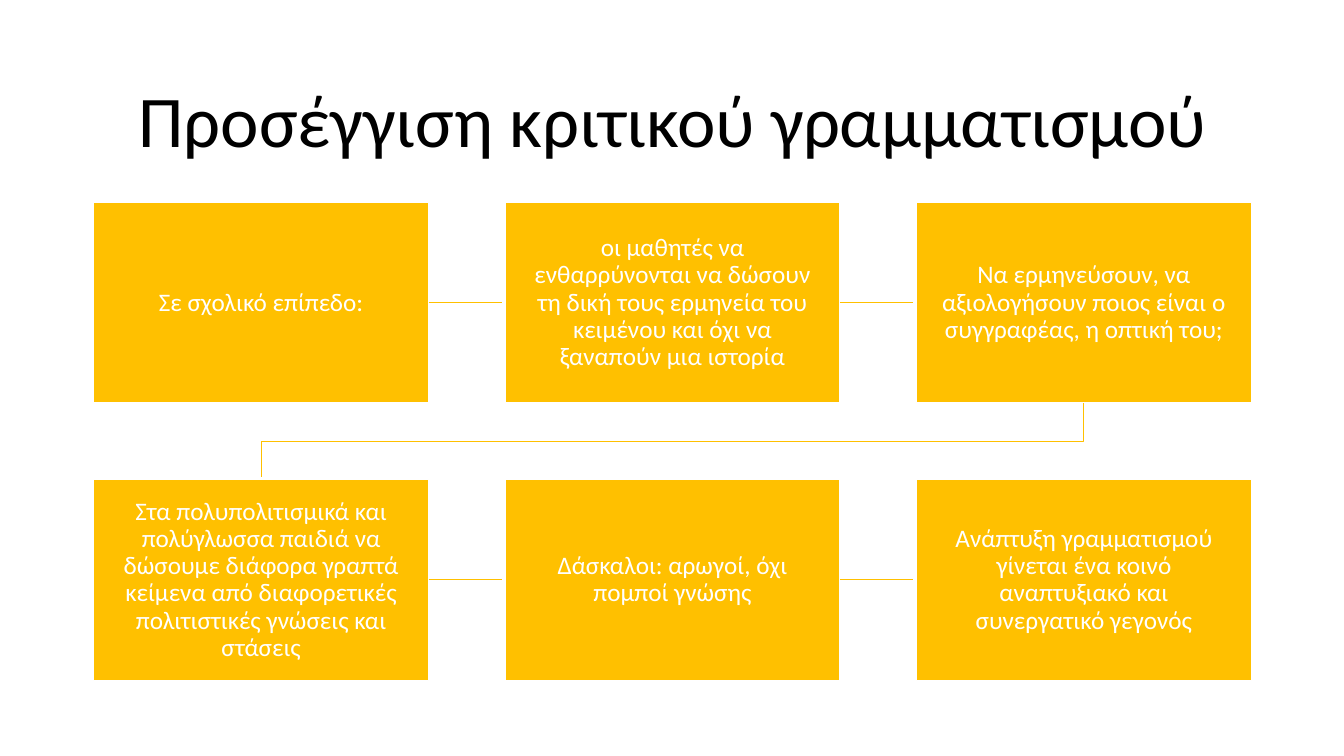
"""Build a slide with a six-step flow on the critical literacy approach."""
from pptx import Presentation
from pptx import util as u
from pptx.dml.color import RGBColor
from pptx.enum import shapes, text
from pptx.oxml import ns, xmlchemy

PX = 9144
THEME = {
    "font": "Calibri",
    "title_size": 52,
    "step_size": 18,
    "black": RGBColor.from_string("000000"),
    "white": RGBColor.from_string("FFFFFF"),
    "amber": RGBColor.from_string("FFC000"),
}
TITLE = "Προσέγγιση κριτικού γραμματισμού"
STEPS = [
    "Σε σχολικό επίπεδο:",
    "οι μαθητές να ενθαρρύνονται να δώσουν τη δική τους ερμηνεία του κειμένου και όχι να ξαναπούν μια ιστορία",
    "Να ερμηνεύσουν, να αξιολογήσουν ποιος είναι ο συγγραφέας, η οπτική του;",
    "Στα πολυπολιτισμικά και πολύγλωσσα παιδιά να δώσουμε διάφορα γραπτά κείμενα από διαφορετικές πολιτιστικές γνώσεις και στάσεις",
    "Δάσκαλοι: αρωγοί, όχι πομποί γνώσης",
    "Ανάπτυξη γραμματισμού γίνεται ένα κοινό αναπτυξιακό και συνεργατικό γεγονός",
]
COLUMNS = 3
LEFT, TOP = 93, 201
BOX_WIDTH, BOX_HEIGHT = 332, 199
COLUMN_STEP, ROW_STEP = 408, 275
ARROW_LENGTH = 73


def write_text(shape, content, size, color):
    """Fill a shape with one centred, formatted paragraph."""
    frame = shape.text_frame
    frame.text = content
    frame.word_wrap = True
    frame.auto_size = text.MSO_AUTO_SIZE.NONE
    frame.vertical_anchor = text.MSO_ANCHOR.MIDDLE
    paragraph = frame.paragraphs[0]
    paragraph.alignment = text.PP_ALIGN.CENTER
    paragraph.line_spacing = 0.9
    font = paragraph.runs[0].font
    font.name = THEME["font"]
    font.size = u.Pt(size)
    font.color.rgb = color


def style_arrow(shape):
    """Give a line its colour and arrowhead, without a shadow."""
    shape.line.color.rgb = THEME["amber"]
    shape.line.width = u.Pt(0.5)
    properties = shape.element.spPr
    outline = properties.find(ns.qn("a:ln"))
    outline.append(xmlchemy.OxmlElement("a:tailEnd", {"type": "arrow"}))
    properties.append(xmlchemy.OxmlElement("a:effectLst"))


presentation = Presentation()
presentation.slide_width = 1333 * PX
presentation.slide_height = 750 * PX
slide = presentation.slides.add_slide(presentation.slide_layouts[5])

title = slide.shapes.title
title.left, title.top, title.width, title.height = [n * PX for n in (92, 61, 1150, 124)]
write_text(title, TITLE, THEME["title_size"], THEME["black"])

for index, step in enumerate(STEPS):
    row, column = divmod(index, COLUMNS)
    left = LEFT + column * COLUMN_STEP
    top = TOP + row * ROW_STEP
    box = slide.shapes.add_shape(
        shapes.MSO_SHAPE.RECTANGLE, left * PX, top * PX, BOX_WIDTH * PX, BOX_HEIGHT * PX
    )
    box.shadow.inherit = False
    box.fill.solid()
    box.fill.fore_color.rgb = THEME["amber"]
    box.line.color.rgb = THEME["white"]
    box.line.width = u.Pt(1)
    write_text(box, step, THEME["step_size"], THEME["white"])
    box.text_frame.margin_left = box.text_frame.margin_right = 16 * PX
    box.text_frame.margin_top = box.text_frame.margin_bottom = 17 * PX

    if column < COLUMNS - 1:
        start = left + BOX_WIDTH
        middle = top + BOX_HEIGHT // 2
        arrow = slide.shapes.add_connector(
            shapes.MSO_CONNECTOR.STRAIGHT,
            start * PX, middle * PX, (start + ARROW_LENGTH) * PX, middle * PX,
        )
        style_arrow(arrow)

first_center = LEFT + BOX_WIDTH // 2
last_center = first_center + (COLUMNS - 1) * COLUMN_STEP
row_bottom = TOP + BOX_HEIGHT
turn = row_bottom + 38
builder = slide.shapes.build_freeform(last_center, row_bottom, scale=PX)
builder.add_line_segments(
    [(last_center, turn), (first_center, turn), (first_center, row_bottom + ARROW_LENGTH)],
    close=False,
)
row_link = builder.convert_to_shape()
row_link.fill.background()
style_arrow(row_link)

presentation.save("out.pptx")
